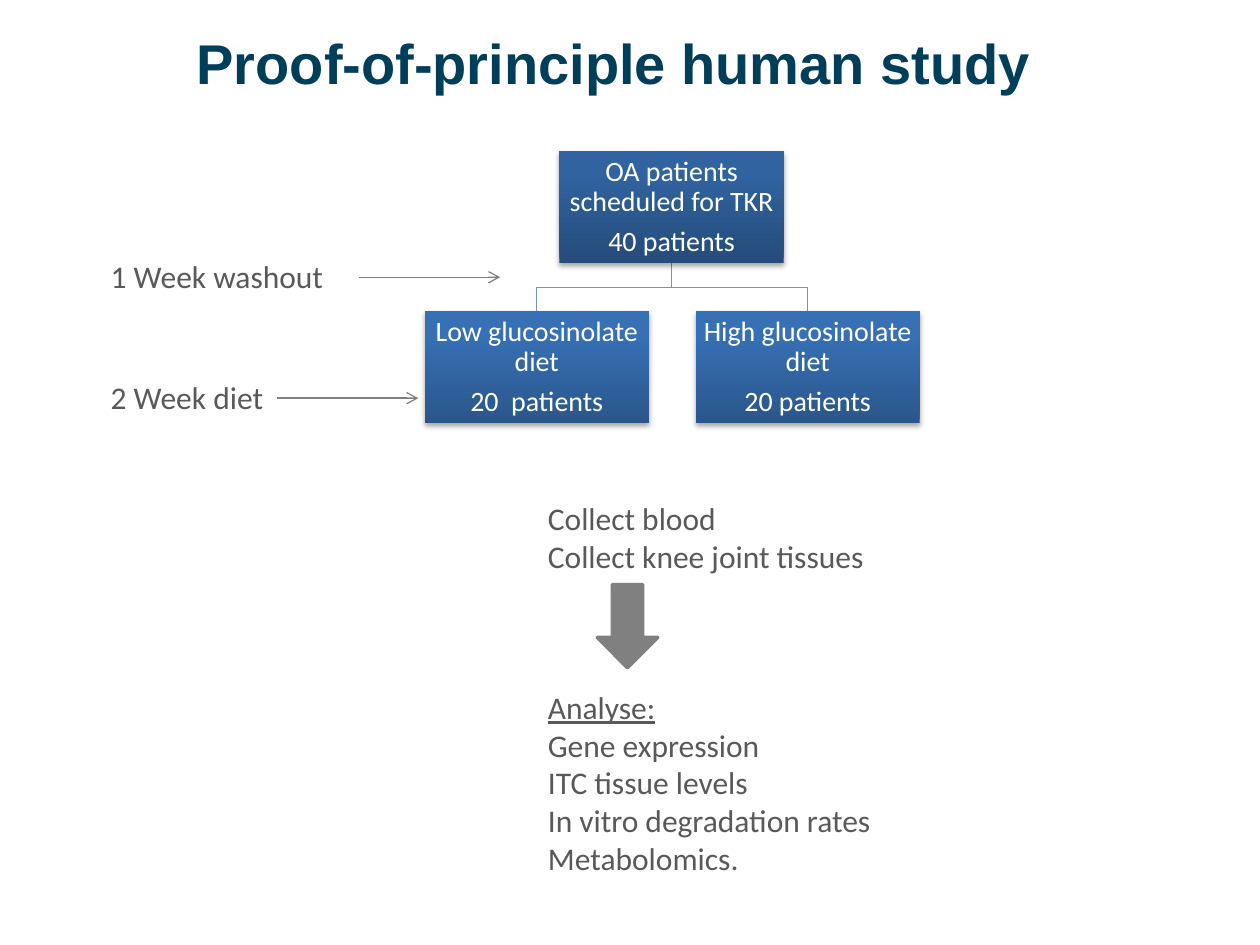
from pptx import Presentation
from pptx.dml.color import RGBColor
from pptx.enum.shapes import MSO_CONNECTOR as Conn, MSO_SHAPE as Kind
from pptx.enum.text import MSO_ANCHOR as Anchor, PP_ALIGN as Align
from pptx.oxml import parse_xml
from pptx.oxml.ns import nsdecls
from pptx.util import Inches, Pt

GREY, TEXT, WHITE, NAVY, EDGE = "808080", "595959", "FFFFFF", "003E5A", "7394C5"
DARK = ("254C7B", "30639F", "2F63A2")
LIGHT = ("2A568B", "3770B5", "3570B8")
BOX_W, BOX_H = 1.78, 0.89


def rgb(code):
    return RGBColor.from_string(code)


def style(par, size, code, face="Calibri", bold=False):
    for run in par.runs:
        font = run.font
        font.size, font.name, font.bold = Pt(size), face, bold
        font.color.rgb = rgb(code)


def add_text(slide, left, top, width, height, lines):
    box = slide.shapes.add_textbox(*map(Inches, (left, top, width, height)))
    frame = box.text_frame
    frame.word_wrap = False
    frame.text = "\n".join(lines)
    for par in frame.paragraphs:
        style(par, 18, TEXT)
    return frame


def shade(shape, codes):
    # Upward three-stop gradient and a soft shadow below
    stops = "".join(
        f'<a:gs pos="{pos}"><a:srgbClr val="{code}"/></a:gs>'
        for pos, code in zip((0, 80000, 100000), codes))
    props = shape._element.spPr
    props.insert(2, parse_xml(
        f'<a:gradFill {nsdecls("a")} rotWithShape="1"><a:gsLst>{stops}</a:gsLst>'
        '<a:lin ang="16200000" scaled="0"/></a:gradFill>'))
    shape.line.fill.background()
    shape.shadow.inherit = False
    props[-1].append(parse_xml(
        f'<a:outerShdw {nsdecls("a")} blurRad="40000" dist="23000" dir="5400000" '
        'rotWithShape="0"><a:srgbClr val="000000"><a:alpha val="35000"/>'
        '</a:srgbClr></a:outerShdw>'))


def add_box(slide, left, top, codes, lines):
    shape = slide.shapes.add_shape(
        Kind.RECTANGLE, *map(Inches, (left, top, BOX_W, BOX_H)))
    shade(shape, codes)
    frame = shape.text_frame
    frame.word_wrap = True
    frame.vertical_anchor = Anchor.MIDDLE
    frame.margin_left = frame.margin_right = Inches(0.01)
    frame.margin_top = frame.margin_bottom = Inches(0.01)
    frame.text = "\n".join(lines)
    for par in frame.paragraphs:
        par.alignment, par.line_spacing = Align.CENTER, 0.9
        style(par, 16, WHITE)
    frame.paragraphs[1].space_before = Pt(5.6)


def add_elbow(slide, start, end):
    # Down, across and down again, turning halfway
    (x1, y1), (x2, y2) = start, end
    mid = (y1 + y2) / 2
    build = slide.shapes.build_freeform(Inches(x1), Inches(y1))
    build.add_line_segments(
        [(Inches(x), Inches(y)) for x, y in ((x1, mid), (x2, mid), (x2, y2))],
        close=False)
    shape = build.convert_to_shape()
    shape.fill.background()
    shape.line.color.rgb = rgb(EDGE)
    shape.line.width = Pt(0.75)
    shape.shadow.inherit = False


def add_arrow(slide, left, top, width):
    line = slide.shapes.add_connector(
        Conn.STRAIGHT, *map(Inches, (left, top, left + width, top)))
    line.line.color.rgb = rgb(GREY)
    line.line.width = Pt(0.75)
    line.line._get_or_add_ln().append(
        parse_xml(f'<a:tailEnd {nsdecls("a")} type="arrow"/>'))
    line._element.spPr.append(parse_xml(f'<a:effectLst {nsdecls("a")}/>'))


def add_title(slide, text):
    title = slide.shapes.title
    title.left, title.top = Inches(1.46), Inches(0.18)
    title.width, title.height = Inches(6.88), Inches(0.64)
    frame = title.text_frame
    frame.text = text
    frame.word_wrap = False
    frame.vertical_anchor = Anchor.TOP
    frame.paragraphs[0].alignment = Align.LEFT
    style(frame.paragraphs[0], 32, NAVY, "Arial", True)


def add_chart(slide):
    # Patient group split into two diets
    left, top, low = 4.44, 1.2, 2.47
    diets = ((3.37, ("Low glucosinolate diet", "20  patients")),
             (5.52, ("High glucosinolate diet", "20 patients")))
    root = (left + BOX_W / 2, top + BOX_H)
    for x, _ in diets:
        add_elbow(slide, root, (x + BOX_W / 2, low))
    add_box(slide, left, top, DARK,
            ("OA patients scheduled for TKR", "40 patients"))
    for x, lines in diets:
        add_box(slide, x, low, LIGHT, lines)


def add_steps(slide):
    # Samples, block arrow and analyses
    add_text(slide, 4.25, 3.91, 2.79, 0.7,
             ("Collect blood", "Collect knee joint tissues"))
    frame = add_text(slide, 4.25, 5.41, 2.79, 1.63, (
        "Analyse:", "Gene expression", "ITC tissue levels",
        "In vitro degradation rates", "Metabolomics."))
    frame.paragraphs[0].runs[0].font.underline = True
    arrow = slide.shapes.add_shape(
        Kind.DOWN_ARROW, *map(Inches, (4.74, 4.64, 0.48, 0.66)))
    arrow.fill.solid()
    arrow.fill.fore_color.rgb = arrow.line.color.rgb = rgb(GREY)
    arrow.line.width = Pt(2)
    arrow.shadow.inherit = False


def main():
    deck = Presentation()
    deck.slide_width, deck.slide_height = Inches(10), Inches(7.5)
    slide = deck.slides.add_slide(deck.slide_layouts[5])
    add_title(slide, "Proof-of-principle human study")
    add_chart(slide)
    # Timeline labels with their arrows
    for text, top, width, start in (("1 Week washout", 1.99, 1.91, 2.85),
                                    ("2 Week diet", 2.95, 1.43, 2.2)):
        add_text(slide, 0.78, top, width, 0.4, (text,))
        add_arrow(slide, start, top + 0.21, 1.12)
    add_steps(slide)
    deck.save("out.pptx")


if __name__ == "__main__":
    main()
